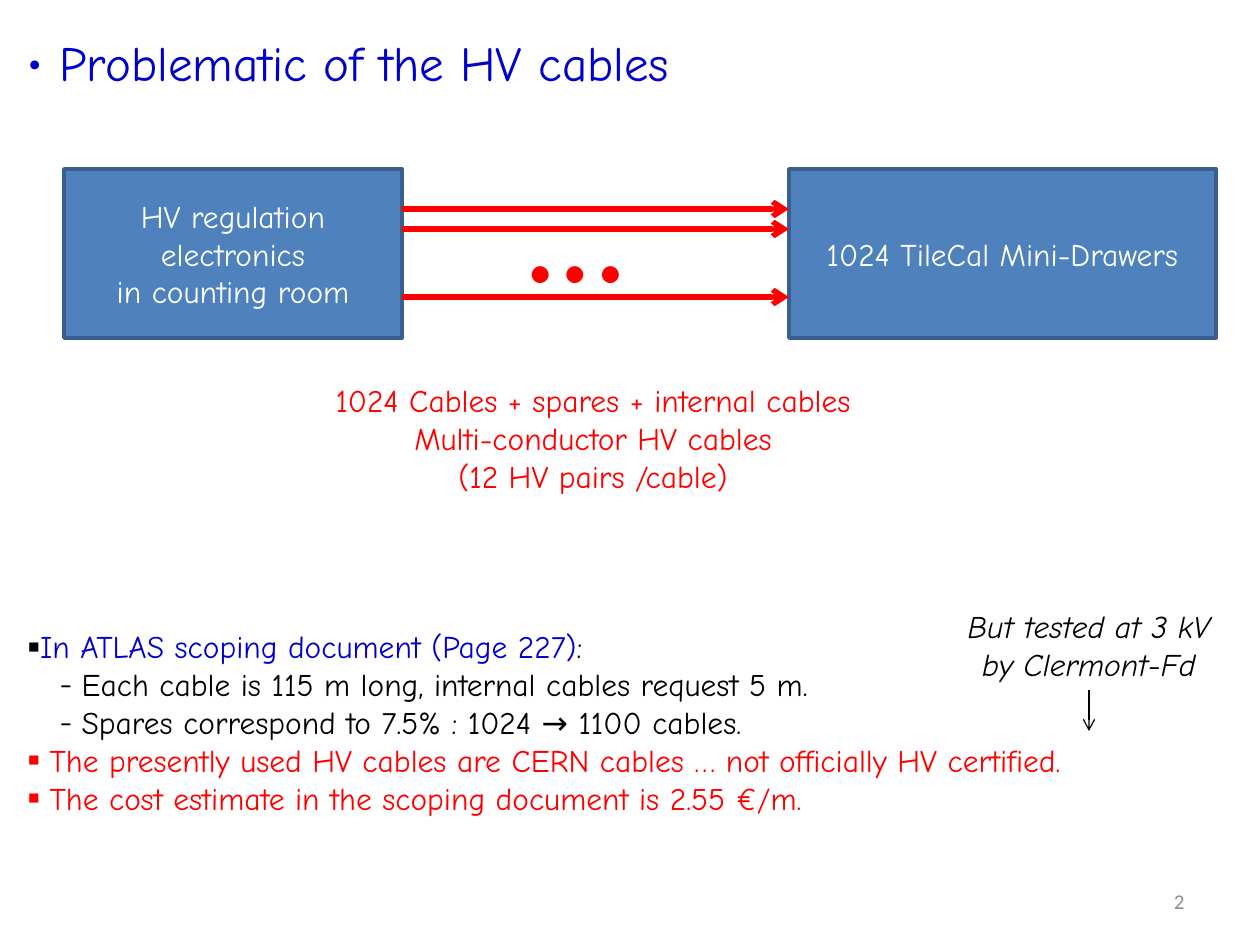
"""Build the slide on the HV cables between counting room and mini-drawers."""
from lxml import etree
from pptx import Presentation
from pptx import util as u
from pptx.dml.color import RGBColor
from pptx.enum import shapes, text
from pptx.oxml import ns

SCALE = 914400 / 126
FONT = "Comic Neue"
RED, BLUE, BLACK, WHITE = "FF0000", "0000CC", "000000", "FFFFFF"
LEFT, CENTER, RIGHT = text.PP_ALIGN.LEFT, text.PP_ALIGN.CENTER, text.PP_ALIGN.RIGHT
TOP, MIDDLE = text.MSO_ANCHOR.TOP, text.MSO_ANCHOR.MIDDLE


def emu(*lengths):
    return [round(length * SCALE) for length in lengths]


def write(box, wording, color, size=18, align=CENTER, anchor=TOP, wrap=True, font=FONT, italic=False):
    frame = box.text_frame
    frame.text = wording
    frame.word_wrap = wrap
    frame.auto_size = text.MSO_AUTO_SIZE.NONE
    frame.vertical_anchor = anchor
    for para in frame.paragraphs:
        para.alignment = align
        para.space_before = u.Pt(0)
        for span in para.runs:
            span.font.name = font
            span.font.size = u.Pt(size)
            span.font.italic = italic
            span.font.color.rgb = RGBColor.from_string(color)


deck = Presentation()
deck.slide_width, deck.slide_height = emu(1260, 945)
page = deck.slides.add_slide(deck.slide_layouts[1])

title, body = page.shapes.title, page.placeholders[1]
title.left, title.top, title.width, title.height = emu(15, 26, 740, 72)
write(title, "Problematic of the HV cables", BLUE, size=28, align=LEFT)

blocks = []
for left, width, wording in [
    (64, 338, "HV regulation\nelectronics\nin counting room"),
    (789, 427, "1024 TileCal Mini-Drawers"),
]:
    block = page.shapes.add_shape(shapes.MSO_SHAPE.RECTANGLE, *emu(left, 169, width, 169))
    block.shadow.inherit = False
    block.fill.solid()
    block.fill.fore_color.rgb = RGBColor.from_string("4F81BD")
    block.line.color.rgb = RGBColor.from_string("3A5F8C")
    block.line.width = u.Pt(2)
    write(block, wording, WHITE, anchor=MIDDLE)

for x1, y1, x2, y2, color, weight in [
    (402, 209, 789, 209, RED, 3),
    (402, 229, 789, 229, RED, 3),
    (402, 297, 789, 297, RED, 3),
    (1089, 690, 1089, 731, BLACK, 0.75),
]:
    arrow = page.shapes.add_connector(shapes.MSO_CONNECTOR.STRAIGHT, *emu(x1, y1, x2, y2))
    arrow.line.color.rgb = RGBColor.from_string(color)
    arrow.line.width = u.Pt(weight)
    etree.SubElement(arrow.line._get_or_add_ln(), ns.qn("a:tailEnd"), type="arrow")
    etree.SubElement(arrow._element.spPr, ns.qn("a:effectLst"))

for left, top, width, height, wording, style in [
    (515, 136, 123, 183, "…", dict(color=RED, size=80, align=LEFT, font="Calibri", wrap=False)),
    (300, 375, 586, 127,
     "1024 Cables + spares + internal cables\nMulti-conductor HV cables\n(12 HV pairs /cable)",
     dict(color=RED, wrap=False)),
    (937, 601, 304, 89, "But tested at 3 kV\nby Clermont-Fd",
     dict(color=BLACK, italic=True, wrap=False)),
    (903, 876, 294, 50, "2",
     dict(color="8C8C8C", size=12, align=RIGHT, anchor=MIDDLE, font="Calibri")),
]:
    write(page.shapes.add_textbox(*emu(left, top, width, height)), wording, **style)

items = [
    ("In ATLAS scoping document (Page 227)", "▪", 12, 12, BLUE, BLACK),
    ("Each cable is 115 m long, internal cables request 5 m.", "-", 54, 22, BLACK, BLACK),
    ("Spares correspond to 7.5% : 1024 → 1100 cables.", "-", 54, 22, BLACK, BLACK),
    ("The presently used HV cables are CERN cables … not officially HV certified.",
     "▪", 22, 22, RED, RED),
    ("The cost estimate in the scoping document is 2.55 €/m.", "▪", 22, 22, RED, RED),
]
body.left, body.top, body.width, body.height = emu(15, 621, 1230, 204)
write(body, "\n".join(item[0] for item in items), BLACK, align=LEFT)
bulleted = [(title.text_frame.paragraphs[0], "•", 32, 32, BLUE, BLUE)]
bulleted += [(para, *item[1:]) for para, item in zip(body.text_frame.paragraphs, items)]
for para, mark, margin, hang, color, mark_color in bulleted:
    para.runs[0].font.color.rgb = RGBColor.from_string(color)
    props = para._p.get_or_add_pPr()
    props.set("marL", str(emu(margin)[0]))
    props.set("indent", str(-emu(hang)[0]))
    tint = etree.SubElement(props, ns.qn("a:buClr"))
    etree.SubElement(tint, ns.qn("a:srgbClr"), val=mark_color)
    etree.SubElement(props, ns.qn("a:buFont"), typeface=FONT)
    etree.SubElement(props, ns.qn("a:buChar"), char=mark)

colon = body.text_frame.paragraphs[0].add_run()
colon.text = ":"
colon.font.name = FONT
colon.font.size = u.Pt(18)
colon.font.color.rgb = RGBColor.from_string(BLACK)

deck.save("out.pptx")
